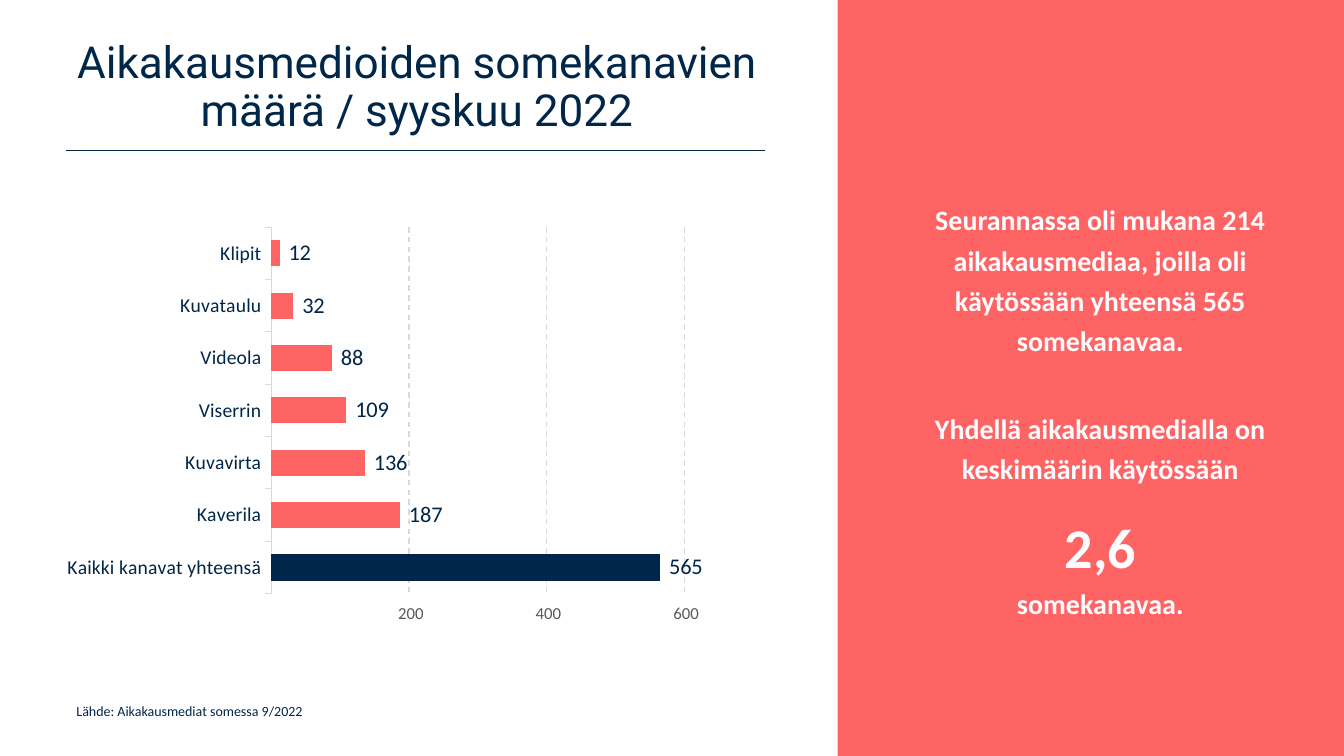
from lxml import etree
from pptx import Presentation
from pptx import util as u
from pptx.chart import data
from pptx.dml import color
from pptx.enum import chart as ch, dml, shapes, text
from pptx.oxml import ns

NAVY, CORAL, GRID, GREY, OFFWHITE = "002649", "FF6464", "D9D9D9", "595959", "FEFCFF"
HEADLINE = "Aikakausmedioiden somekanavien määrä / syyskuu 2022"
SOURCE = "Lähde: Aikakausmediat somessa 9/2022"
CHANNELS = [
    ("Kaikki kanavat yhteensä", 565),
    ("Kaverila", 187),
    ("Kuvavirta", 136),
    ("Viserrin", 109),
    ("Videola", 88),
    ("Kuvataulu", 32),
    ("Klipit", 12),
]
FINDINGS = [
    (0, [("Seurannassa oli mukana 214 aikakausmediaa, joilla oli käytössään "
          "yhteensä 565 somekanavaa.", 20)]),
    (34, [("Yhdellä aikakausmedialla on keskimäärin käytössään", 20)]),
    (10, [("2,6", 40)]),
    (0, [("somekanavaa.", 20)]),
]
NUMBER_FORMAT = "#\\ ##0;\\-#\\ ##0;;@"
PLOT = {"x": 0.324, "y": 0.086, "w": 0.493, "h": 0.838}
WIDTH, HEIGHT, PANEL_LEFT = 960, 540, 598.3
MARGIN = 47.5


def rgb(code):
    return color.RGBColor.from_string(code)


def box(*lengths):
    return [u.Pt(length) for length in lengths]


def style(font, size, code, name="Calibri", bold=False):
    font.size, font.name, font.bold = u.Pt(size), name, bold
    font.color.rgb = rgb(code)


def paint(part, code):
    part.fill.solid()
    part.fill.fore_color.rgb = rgb(code)


def add_run(paragraph, words, *look, **extra):
    run = paragraph.add_run()
    run.text = words
    style(run.font, *look, **extra)


def add_frame(slide, *lengths):
    frame = slide.shapes.add_textbox(*box(*lengths)).text_frame
    frame.word_wrap = True
    return frame


def place_plot(chart):
    area = chart._chartSpace.chart.plotArea
    for old in area.findall(ns.qn("c:layout")):
        area.remove(old)
    layout = etree.Element(ns.qn("c:layout"))
    area.insert(0, layout)
    manual = etree.SubElement(layout, ns.qn("c:manualLayout"))
    settings = [("layoutTarget", "inner"), ("xMode", "edge"), ("yMode", "edge")]
    for tag, value in settings + list(PLOT.items()):
        etree.SubElement(manual, ns.qn("c:" + tag)).set("val", str(value))


def add_channel_chart(slide):
    counts = data.CategoryChartData()
    counts.categories = [name for name, _ in CHANNELS]
    counts.add_series("Series 1", [count for _, count in CHANNELS])
    chart = slide.shapes.add_chart(
        ch.XL_CHART_TYPE.BAR_CLUSTERED, *box(0, 135.4, PANEL_LEFT, 312.5), counts).chart
    chart.has_legend = chart.has_title = False
    style(chart.font, 10, "000000")
    place_plot(chart)

    names = chart.category_axis
    style(names.tick_labels.font, 14, NAVY)
    names.major_tick_mark = ch.XL_TICK_MARK.OUTSIDE
    names.format.line.color.rgb = rgb(GRID)
    names.format.line.width = u.Pt(0.75)

    scale = chart.value_axis
    scale.minimum_scale, scale.maximum_scale, scale.major_unit = 0, 600, 200
    scale.format.line.fill.background()
    style(scale.tick_labels.font, 12, GREY)
    scale.tick_labels.number_format = NUMBER_FORMAT
    scale.tick_labels.number_format_is_linked = False
    gridline = scale.major_gridlines.format.line
    gridline.color.rgb = rgb(GRID)
    gridline.width = u.Pt(1)
    gridline.dash_style = dml.MSO_LINE.DASH

    bars = chart.plots[0]
    bars.gap_width, bars.vary_by_categories = 100, False
    series = bars.series[0]
    paint(series.format, CORAL)
    paint(series.points[0].format, NAVY)
    labels = series.data_labels
    labels.show_value = True
    labels.position = ch.XL_LABEL_POSITION.OUTSIDE_END
    labels.number_format, labels.number_format_is_linked = NUMBER_FORMAT, False
    style(labels.font, 16, NAVY)


def main():
    deck = Presentation()
    deck.slide_width, deck.slide_height = box(WIDTH, HEIGHT)
    slide = deck.slides.add_slide(deck.slide_layouts[5])

    panel = slide.shapes.add_shape(
        shapes.MSO_SHAPE.RECTANGLE, *box(PANEL_LEFT, 0, WIDTH - PANEL_LEFT, HEIGHT))
    panel.shadow.inherit = False
    paint(panel, CORAL)
    panel.line.fill.background()

    rule = slide.shapes.add_connector(
        shapes.MSO_CONNECTOR.STRAIGHT, *box(MARGIN, 107.3, 546.5, 107.3))
    rule.line.color.rgb = rgb(NAVY)
    rule.line.width = u.Pt(1)
    etree.SubElement(rule._element.spPr, ns.qn("a:effectLst"))

    headline = slide.shapes.title
    headline.left, headline.top, headline.width, headline.height = box(MARGIN, 18, 500.4, 90)
    frame = headline.text_frame
    frame.word_wrap, frame.auto_size = True, text.MSO_AUTO_SIZE.NONE
    frame.vertical_anchor = text.MSO_ANCHOR.MIDDLE
    paragraph = frame.paragraphs[0]
    paragraph.alignment, paragraph.line_spacing = text.PP_ALIGN.CENTER, 0.9
    add_run(paragraph, HEADLINE, 31.5, NAVY, name="Roboto")

    add_channel_chart(slide)

    findings = add_frame(slide, 650.9, 108, 270, 367.2)
    findings.vertical_anchor = text.MSO_ANCHOR.MIDDLE
    for index, (gap, runs) in enumerate(FINDINGS):
        paragraph = findings.add_paragraph() if index else findings.paragraphs[0]
        paragraph.alignment, paragraph.line_spacing = text.PP_ALIGN.CENTER, 1.2
        if gap:
            paragraph.space_before = u.Pt(gap)
        for words, size in runs:
            add_run(paragraph, words, size, OFFWHITE, bold=True)

    source = add_frame(slide, MARGIN, 498.2, 473.8, 31.7)
    add_run(source.paragraphs[0], SOURCE, 10, NAVY)

    deck.save("out.pptx")


if __name__ == "__main__":
    main()
